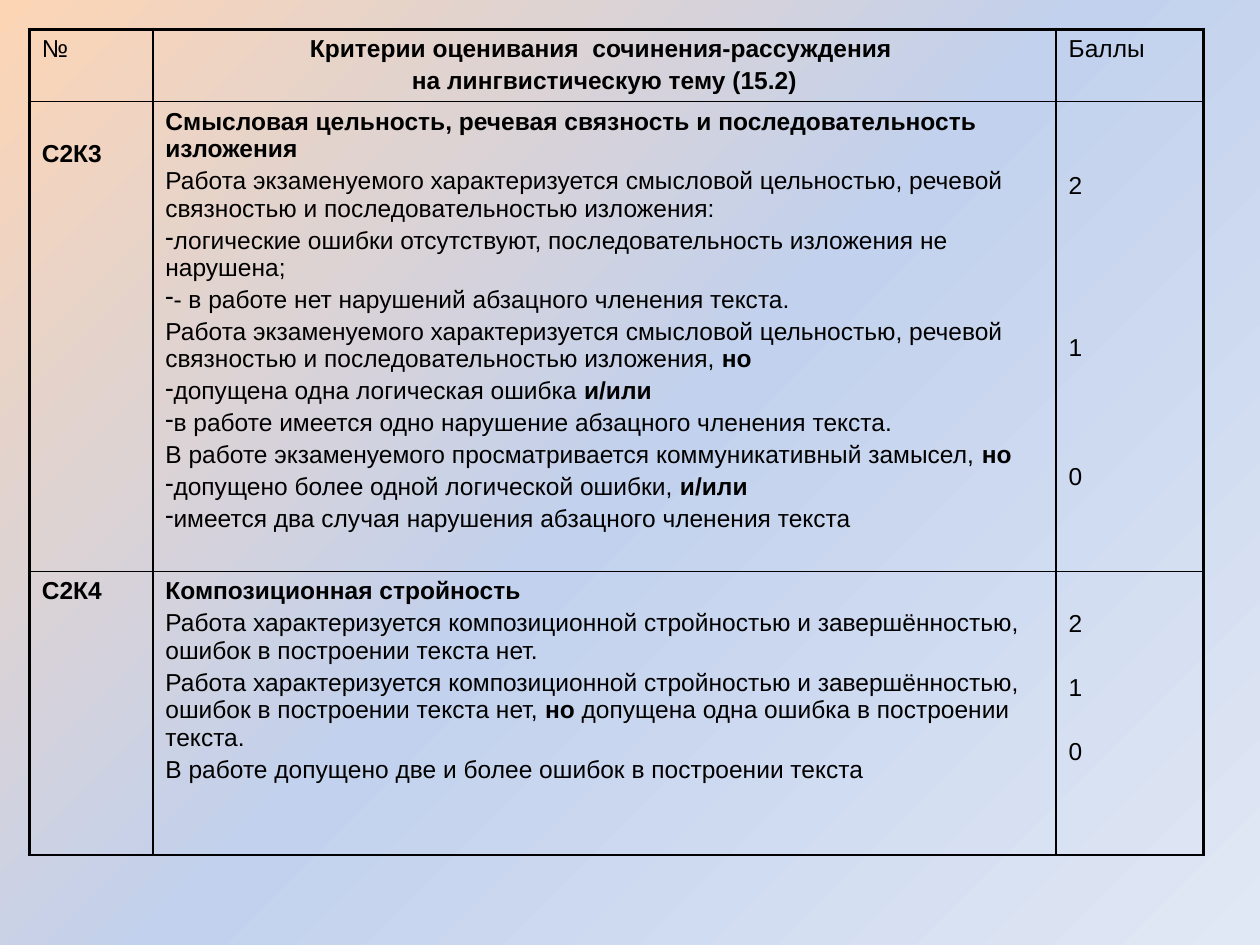
from copy import deepcopy
from dataclasses import dataclass

from pptx import Presentation
from pptx.dml.color import RGBColor as RGB
from pptx.enum.text import PP_ALIGN as ALIGN
from pptx.oxml.ns import qn
from pptx.oxml.xmlchemy import OxmlElement as Element
from pptx.util import Cm, Pt


@dataclass(frozen=True)
class Theme:
    font: str = "Arial"
    size: float = 14
    gap: float = 2.5       # space before a paragraph, pt
    pitch: float = 18.5    # one line plus its gap, pt
    ink: str = "000000"
    thin: float = 1
    thick: float = 2.25
    stops: tuple = ((0, "FCD5B5"), (0.5, "C2D1ED"), (1, "E1E8F5"))


THEME = Theme()
COLS = (2.49, 18.21, 2.97)
ROWS = (1.45, 9.47, 5.72)

# Text between asterisks is bold; a leading hyphen is the bullet
HEADER = ["*Критерии оценивания  сочинения-рассуждения *",
          "*на лингвистическую тему (15.2)*"]
COHERENCE = [
    "*Смысловая цельность, речевая связность и последовательность изложения*",
    "Работа экзаменуемого характеризуется смысловой цельностью, речевой "
    "связностью и последовательностью изложения:",
    "-логические ошибки отсутствуют, последовательность изложения не нарушена;",
    "-- в работе нет нарушений абзацного членения текста.",
    "Работа экзаменуемого характеризуется смысловой цельностью, речевой "
    "связностью и последовательностью изложения, *но*",
    "-допущена одна логическая ошибка *и/или*",
    "-в работе имеется одно нарушение абзацного членения текста.",
    "В работе экзаменуемого просматривается коммуникативный замысел, *но*",
    "-допущено более одной логической ошибки, *и/или*",
    "-имеется два случая нарушения абзацного членения текста",
]
COMPOSITION = [
    "*Композиционная стройность*",
    "Работа характеризуется композиционной стройностью и завершённостью, "
    "ошибок в построении текста нет.",
    "Работа характеризуется композиционной стройностью и завершённостью, "
    "ошибок в построении текста нет, *но *допущена одна ошибка в построении "
    "текста.",
    "В работе допущено две и более ошибок в построении текста",
]
SCORES = ["2", "1", "0"]


def set_background(s):
    fill = s.background.fill
    fill.gradient()
    fill.gradient_angle = 315
    stop_list = s.element.find(".//" + qn("a:gsLst"))
    stop_list.append(deepcopy(stop_list[0]))
    for stop, (position, color) in zip(fill.gradient_stops, THEME.stops):
        stop.position = position
        stop.color.rgb = RGB.from_string(color)


def set_border(cell, side, width):
    ln = Element(f"a:ln{side}")
    ln.set("w", str(Pt(width)))
    fill = Element("a:solidFill")
    color = Element("a:srgbClr")
    color.set("val", THEME.ink)
    fill.append(color)
    ln.append(fill)
    cell._tc.get_or_add_tcPr().append(ln)


def add_hyphen_bullet(p):
    props = p._p.get_or_add_pPr()
    props.set("marL", "0")
    props.set("indent", "0")
    bullet = Element("a:buChar")
    bullet.set("char", "-")
    props.append(bullet)


def add_run(p, text, bold):
    r = p.add_run()
    r.text = text
    r.font.name = THEME.font
    r.font.size = Pt(THEME.size)
    r.font.bold = bold
    r.font.color.rgb = RGB.from_string(THEME.ink)


def write_cell(cell, lines, skips=(), align=ALIGN.LEFT):
    """Write paragraphs; skips gives the lines left free above each one."""
    tf = cell.text_frame
    for i, line in enumerate(lines):
        p = tf.paragraphs[0] if i == 0 else tf.add_paragraph()
        p.alignment = align
        free = THEME.pitch * skips[i] if skips else 0
        if i == 0:
            cell.margin_top = Cm(0.13) + Pt(free)
        else:
            p.space_before = Pt(THEME.gap + free)
        if line.startswith("-"):
            add_hyphen_bullet(p)
            line = line[1:]
        for k, part in enumerate(line.split("*")):
            if part:
                add_run(p, part, bold=k % 2 == 1)


def add_criteria_table(s):
    frame = s.shapes.add_table(len(ROWS), len(COLS), Cm(0.59), Cm(0.59),
                               Cm(sum(COLS)), Cm(sum(ROWS)))
    table = frame.table
    table.first_row = table.horz_banding = False
    for column, width in zip(table.columns, COLS):
        column.width = Cm(width)
    for row, height in zip(table.rows, ROWS):
        row.height = Cm(height)

    # Heavy frame on the left, top and right; thin lines elsewhere
    for i in range(len(ROWS)):
        for j in range(len(COLS)):
            cell = table.cell(i, j)
            heavy = {"L": j == 0, "R": j == len(COLS) - 1,
                     "T": i == 0, "B": False}
            for side, is_heavy in heavy.items():
                set_border(cell, side, THEME.thick if is_heavy else THEME.thin)
            cell.fill.background()
    return table


def main():
    prs = Presentation()
    prs.slide_width, prs.slide_height = Cm(25.4), Cm(19.05)
    s = prs.slides.add_slide(prs.slide_layouts[6])
    set_background(s)
    table = add_criteria_table(s)

    # Header row
    write_cell(table.cell(0, 0), ["№"])
    write_cell(table.cell(0, 1), HEADER, align=ALIGN.CENTER)
    write_cell(table.cell(0, 2), ["Баллы"])

    # Coherence criterion
    write_cell(table.cell(1, 0), ["*С2К3*"], skips=(1,))
    write_cell(table.cell(1, 1), COHERENCE)
    write_cell(table.cell(1, 2), SCORES, skips=(2, 4, 3))

    # Composition criterion
    write_cell(table.cell(2, 0), ["*С2К4*"])
    write_cell(table.cell(2, 1), COMPOSITION)
    write_cell(table.cell(2, 2), SCORES, skips=(1, 1, 1))

    prs.save("out.pptx")


if __name__ == "__main__":
    main()
